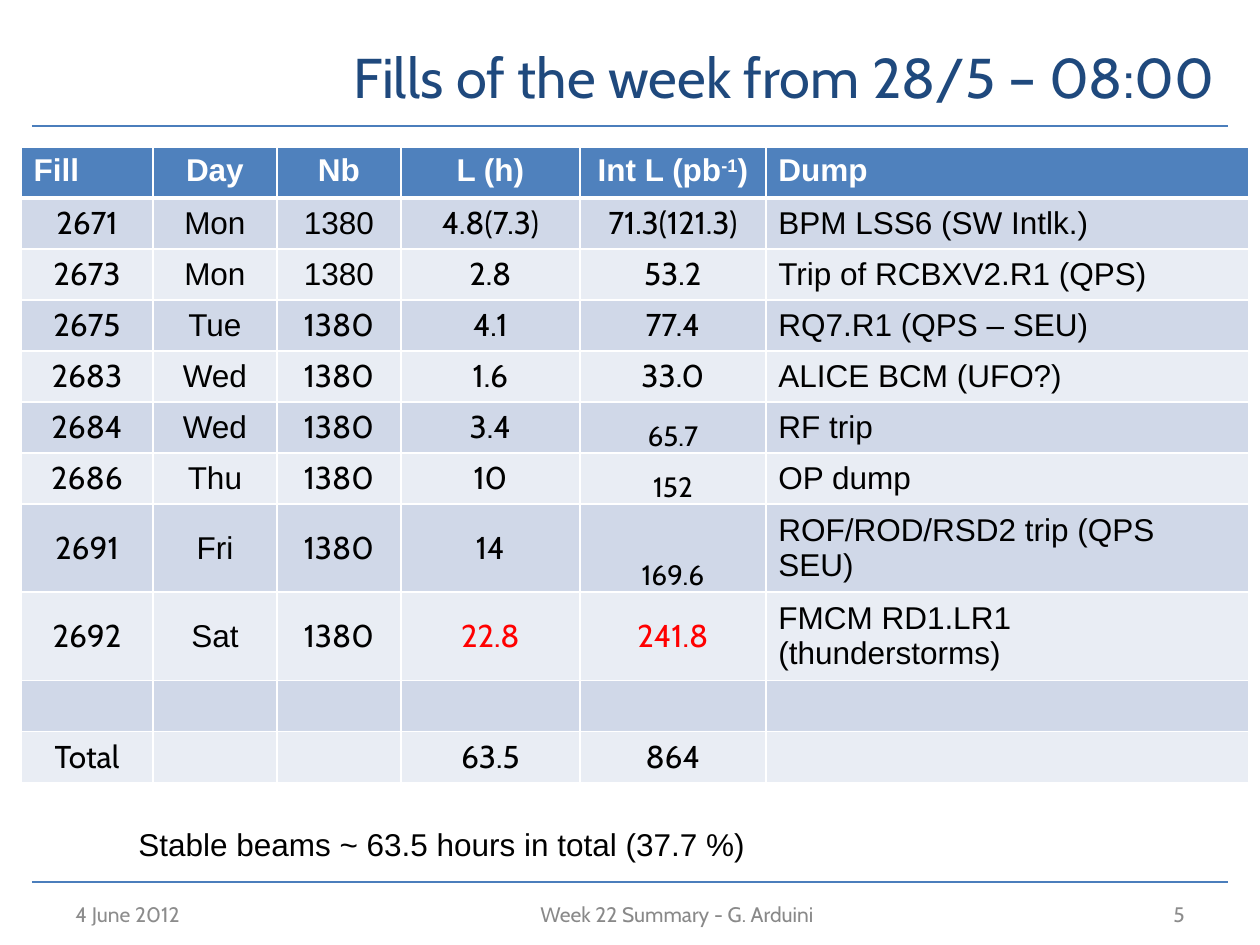
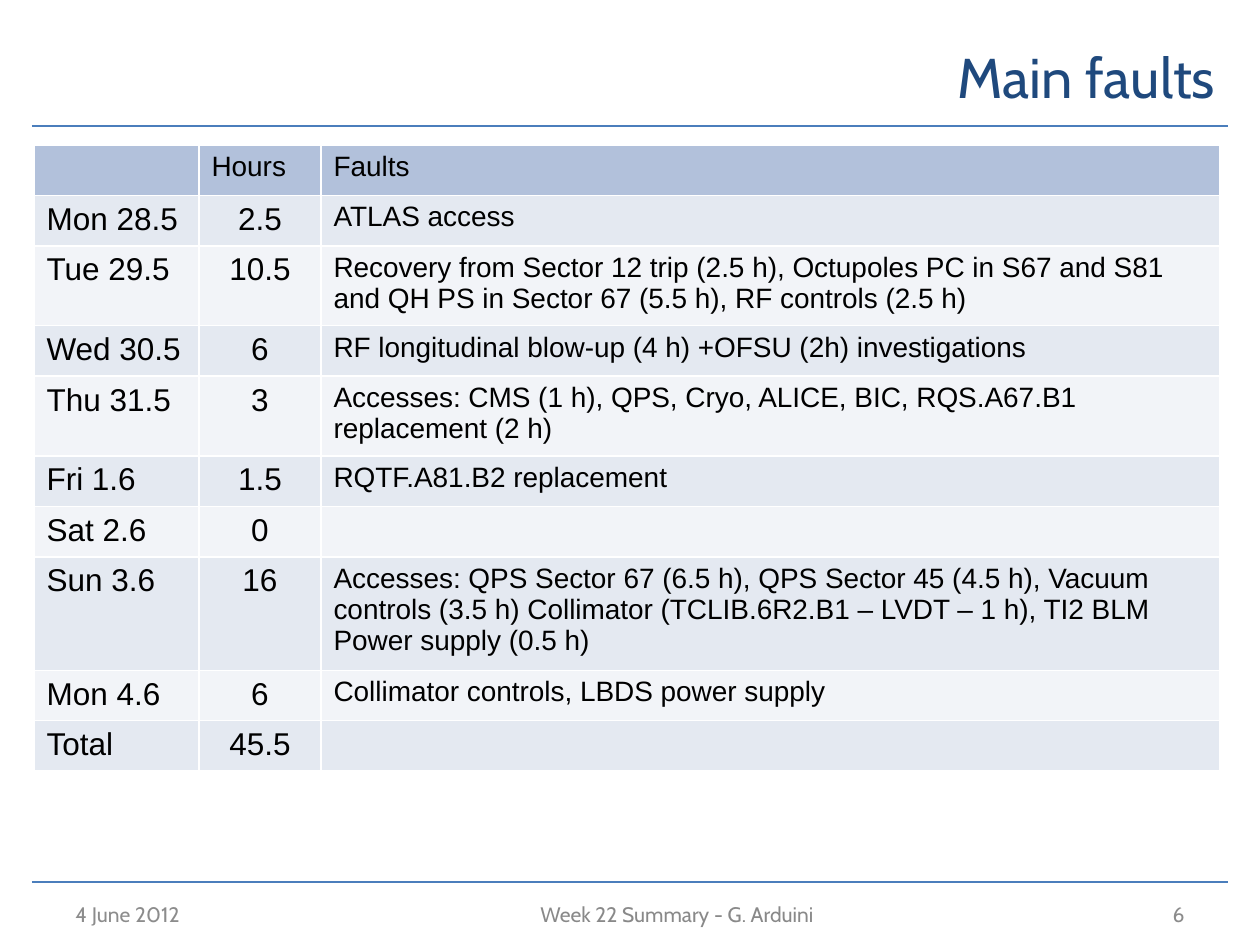
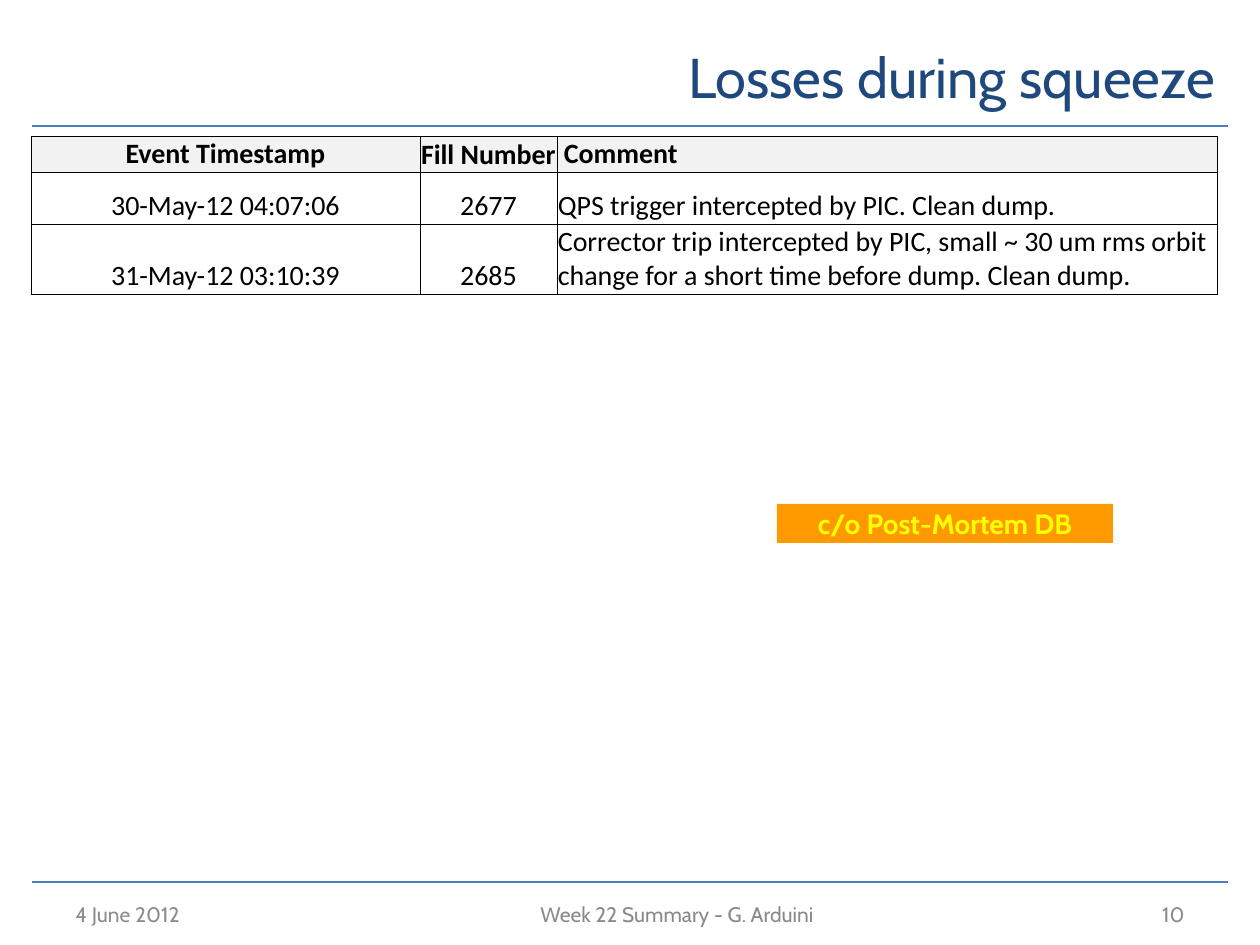
from dataclasses import dataclass

from lxml.etree import SubElement
from pptx import Presentation
from pptx.dml.color import RGBColor
from pptx.enum.shapes import MSO_CONNECTOR, MSO_SHAPE
from pptx.enum.text import MSO_ANCHOR, PP_ALIGN
from pptx.oxml.ns import qn
from pptx.util import Inches, Pt

PX = 914400 // 126
LEFT, CENTER, RIGHT = PP_ALIGN.LEFT, PP_ALIGN.CENTER, PP_ALIGN.RIGHT
TOP, MIDDLE, BOTTOM = MSO_ANCHOR.TOP, MSO_ANCHOR.MIDDLE, MSO_ANCHOR.BOTTOM


@dataclass(frozen=True)
class Theme:
    navy: str = "1F497D"
    rule: str = "4B7EBC"
    footer: str = "8C8C8C"
    footer_mid: str = "898989"
    black: str = "000000"
    white: str = "FFFFFF"
    red: str = "FF0000"
    orange: str = "FF9900"
    yellow: str = "FFFF00"
    fills_head: str = "4F81BD"
    fills_bands: tuple = ("D0D8E8", "E9EDF4")
    faults_head: str = "B2C1DB"
    faults_bands: tuple = ("E4E9F1", "F2F4F8")
    losses_head: str = "F2F2F2"
    head_font: str = "Cabin"
    body_font: str = "Arial"
    sheet_font: str = "Calibri"
    title: int = 32
    large: int = 18
    medium: int = 16
    small: int = 12


theme = Theme()


def write(tf, text, font=theme.body_font, size=theme.large, color=theme.black,
          bold=False, align=LEFT, anchor=TOP):
    """Fill a text frame; text between ^ marks is superscript."""
    tf.word_wrap = True
    tf.vertical_anchor = anchor
    p = tf.paragraphs[0]
    p.alignment = align
    for i, part in enumerate(text.split("^")):
        if not part:
            continue
        r = p.add_run()
        r.text = part
        r.font.name = font
        r.font.size = Pt(size)
        r.font.bold = bold
        r.font.color.rgb = RGBColor.from_string(color)
        if i % 2:
            r.font._element.set("baseline", "30000")


def draw_table(s, left, top, widths, heights, rows, head, columns,
               head_fill, bands, border, border_pt, head_border_pt):
    """Draw rows whose cells are text or (text, format overrides)."""
    table = s.shapes.add_table(len(rows), len(widths), left * PX, top * PX,
                               sum(widths) * PX, sum(heights) * PX).table
    for column, width in zip(table.columns, widths):
        column.width = width * PX
    for i, (row, height) in enumerate(zip(rows, heights)):
        table.rows[i].height = height * PX
        for j, entry in enumerate(row):
            text, changes = (entry, {}) if isinstance(entry, str) else entry
            fmt = {**(columns[j] if i else head), **changes}
            inset = fmt.pop("inset", None)
            cell = table.cell(i, j)
            if inset is not None:
                cell.margin_left = cell.margin_right = inset * PX
                cell.margin_top = cell.margin_bottom = inset * PX
            cell.vertical_anchor = fmt.pop("anchor", TOP)
            write(cell.text_frame, text, **fmt)
            tcPr = cell._tc.get_or_add_tcPr()
            for side in "LRTB":
                under_head = (i, side) in ((0, "B"), (1, "T"))
                width = head_border_pt if under_head else border_pt
                ln = SubElement(tcPr, qn(f"a:ln{side}"), w=str(Pt(width)))
                fill = SubElement(ln, qn("a:solidFill"))
                SubElement(fill, qn("a:srgbClr"), val=border)
            cell.fill.solid()
            color = bands[(i - 1) % len(bands)] if i else head_fill
            cell.fill.fore_color.rgb = RGBColor.from_string(color)
    return table


prs = Presentation()
prs.slide_width, prs.slide_height = Inches(10), Inches(7.5)

# Title, rules and footer of every slide
slides = []
for title, number in (("Fills of the week from 28/5 – 08:00", "5"),
                      ("Main faults", "6"),
                      ("Losses during squeeze", "10")):
    s = prs.slides.add_slide(prs.slide_layouts[5])
    slides.append(s)
    sp = s.shapes.title
    sp.left, sp.top, sp.width, sp.height = 220 * PX, 21 * PX, 1008 * PX, 110 * PX
    write(sp.text_frame, title, font=theme.head_font, size=theme.title,
          color=theme.navy, align=RIGHT, anchor=MIDDLE)
    for y in (126, 882):
        rule = s.shapes.add_connector(MSO_CONNECTOR.STRAIGHT,
                                      32 * PX, y * PX, 1228 * PX, y * PX)
        rule.line.color.rgb = RGBColor.from_string(theme.rule)
        rule.line.width = Pt(1.5)
        SubElement(rule._element.spPr, qn("a:effectLst"))
    for text, left, width, align, color in (
            ("4 June 2012", 63, 294, LEFT, theme.footer),
            ("Week 22 Summary - G. Arduini", 231, 892, CENTER, theme.footer_mid),
            (number, 903, 294, RIGHT, theme.footer)):
        sp = s.shapes.add_textbox(left * PX, 903 * PX, width * PX, 23 * PX)
        write(sp.text_frame, text, font=theme.head_font, size=theme.small,
              color=color, align=align, anchor=MIDDLE)

fills, faults, losses = slides

# Fills of the week
label = dict(anchor=MIDDLE)
centered = dict(label, align=CENTER)
count = dict(centered, font=theme.head_font, inset=0)
measure = dict(count, inset=1)
arial_nb = ("1380", dict(font=theme.body_font, inset=None))
low = dict(size=theme.medium, anchor=BOTTOM, inset=0)
record = dict(color=theme.red)
draw_table(
    fills, 21, 147, (132, 124, 124, 179, 186, 483),
    [51] * 7 + [83] * 2 + [51] * 2,
    [
        [("Fill", dict(align=LEFT)), "Day", "Nb", "L (h)", "Int L (pb^-1^)",
         ("Dump", dict(align=LEFT))],
        ["2671", "Mon", arial_nb, "4.8(7.3)", "71.3(121.3)", "BPM LSS6 (SW Intlk.)"],
        ["2673", "Mon", arial_nb, "2.8", "53.2", "Trip of RCBXV2.R1 (QPS)"],
        ["2675", "Tue", "1380", "4.1", "77.4", "RQ7.R1 (QPS – SEU)"],
        ["2683", "Wed", "1380", "1.6", "33.0", "ALICE BCM (UFO?)"],
        ["2684", "Wed", "1380", "3.4", ("65.7", low), "RF trip"],
        ["2686", "Thu", "1380", "10", ("152", low), "OP dump"],
        ["2691", "Fri", "1380", "14", ("169.6", low), "ROF/ROD/RSD2 trip (QPS SEU)"],
        ["2692", "Sat", "1380", ("22.8", record), ("241.8", record),
         "FMCM RD1.LR1 (thunderstorms)"],
        [""] * 6,
        ["Total", "", "", "63.5", "864", ""],
    ],
    head=dict(color=theme.white, bold=True, align=CENTER),
    columns=(count, centered, count, measure, measure, label),
    head_fill=theme.fills_head, bands=theme.fills_bands,
    border=theme.white, border_pt=1, head_border_pt=3)
sp = fills.shapes.add_textbox(126 * PX, 819 * PX, 693 * PX, 50 * PX)
write(sp.text_frame, "Stable beams ~ 63.5 hours in total (37.7 %)")

# Main faults
draw_table(
    faults, 34, 145, (165, 122, 899),
    (50, 48, 75, 48, 75, 48, 48, 106, 48, 48),
    [
        ["", "Hours", "Faults"],
        ["Mon 28.5", "2.5", "ATLAS access"],
        ["Tue 29.5", "10.5", "Recovery from Sector 12 trip (2.5 h), Octupoles PC in S67 "
         "and S81 and QH PS in Sector 67 (5.5 h), RF controls (2.5 h)"],
        ["Wed 30.5", "6", "RF longitudinal blow-up (4 h) +OFSU (2h) investigations"],
        ["Thu 31.5", "3", "Accesses: CMS (1 h), QPS, Cryo, ALICE, BIC, RQS.A67.B1 "
         "replacement (2 h)"],
        ["Fri 1.6", "1.5", "RQTF.A81.B2 replacement"],
        ["Sat 2.6", "0", ""],
        ["Sun 3.6", "16", "Accesses: QPS Sector 67 (6.5 h), QPS Sector 45 (4.5 h), Vacuum "
         "controls (3.5 h) Collimator (TCLIB.6R2.B1 – LVDT – 1 h), TI2 BLM "
         "Power supply (0.5 h)"],
        ["Mon 4.6", "6", "Collimator controls, LBDS power supply"],
        ["Total", "45.5", ""],
    ],
    head=dict(size=theme.medium),
    columns=({}, dict(align=CENTER), dict(size=theme.medium)),
    head_fill=theme.faults_head, bands=theme.faults_bands,
    border=theme.white, border_pt=1, head_border_pt=1)

# Losses during squeeze
comment = dict(font=theme.sheet_font, size=theme.medium, anchor=BOTTOM, inset=1)
event = dict(comment, align=CENTER)
table = draw_table(
    losses, 31, 136, (389, 137, 661), (36, 52, 70),
    [
        ["Event Timestamp", ("Fill Number", dict(inset=0)),
         ("Comment", dict(align=LEFT))],
        ["30-May-12 04:07:06", "2677", "QPS trigger intercepted by PIC. Clean dump."],
        ["31-May-12 03:10:39", "2685", "Corrector trip intercepted by PIC, small ~ 30 um "
         "rms orbit change for a short time before dump. Clean dump."],
    ],
    head=dict(event, bold=True), columns=(event, event, comment),
    head_fill=theme.losses_head, bands=(theme.white,),
    border=theme.black, border_pt=0.5, head_border_pt=0.5)
table.cell(0, 2).margin_left = 7 * PX

credit = losses.shapes.add_shape(MSO_SHAPE.RECTANGLE,
                                 777 * PX, 504 * PX, 336 * PX, 39 * PX)
credit.shadow.inherit = False
credit.fill.solid()
credit.fill.fore_color.rgb = RGBColor.from_string(theme.orange)
credit.line.fill.background()
write(credit.text_frame, "c/o Post-Mortem DB", font=theme.head_font, size=theme.medium,
      color=theme.yellow, bold=True, align=CENTER, anchor=MIDDLE)

prs.save("out.pptx")
